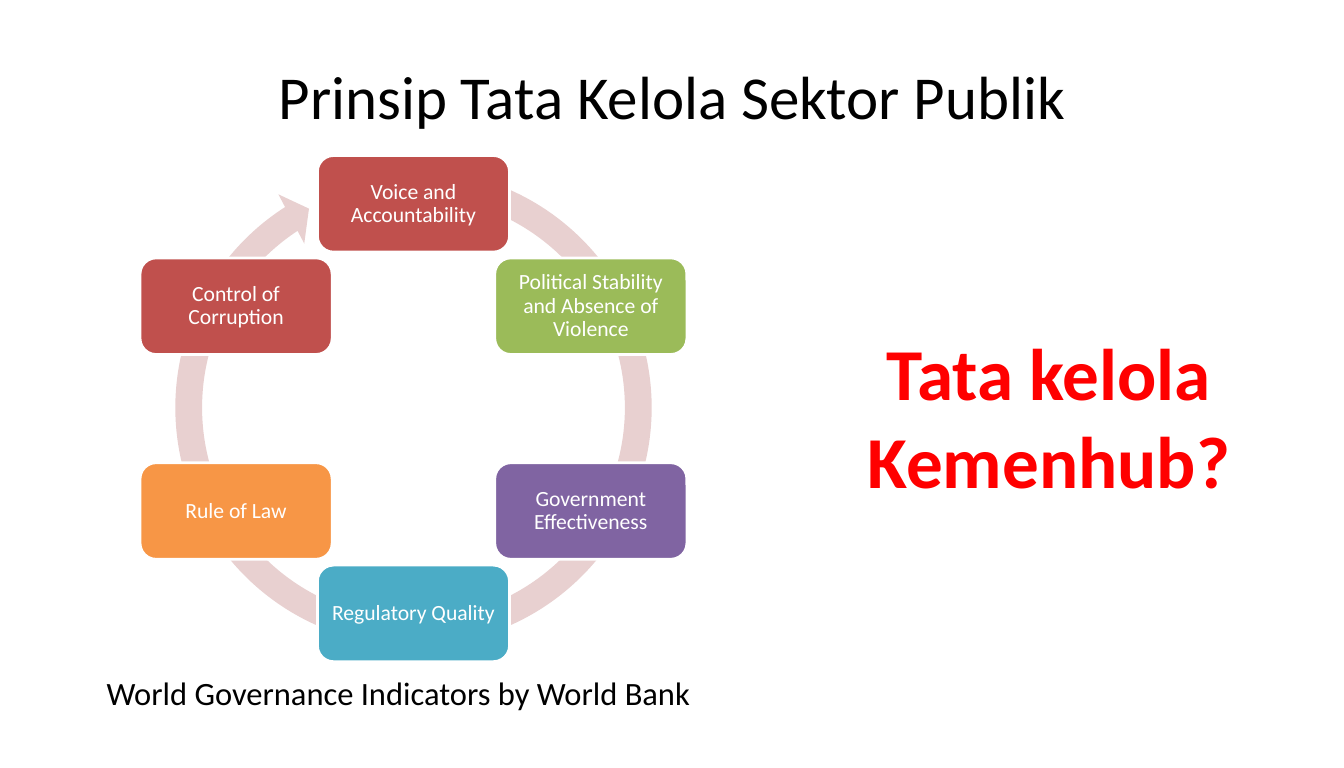
"""Build the slide on public sector governance principles."""
import math

import pptx
import pptx.dml.color
import pptx.enum.shapes
import pptx.enum.text
import pptx.util

Inches = pptx.util.Inches
Pt = pptx.util.Pt
MSO_SHAPE = pptx.enum.shapes.MSO_SHAPE
MSO_ANCHOR = pptx.enum.text.MSO_ANCHOR

COLORS = {
    "black": "000000",
    "white": "FFFFFF",
    "emphasis": "FF0000",
    "ring": "E8D0D0",
    "red": "C0504D",
    "green": "9BBB59",
    "purple": "8064A2",
    "teal": "4BACC6",
    "orange": "F79646",
}
PRINCIPLES = [
    ("Voice and Accountability", "red"),
    ("Political Stability and Absence of Violence", "green"),
    ("Government Effectiveness", "purple"),
    ("Regulatory Quality", "teal"),
    ("Rule of Law", "orange"),
    ("Control of Corruption", "red"),
]
CENTER_X, CENTER_Y = 4.24, 4.19
CYCLE_RADIUS = 2.1
CARD_WIDTH, CARD_HEIGHT = 1.97, 0.99
RING_SIZE = 5.18


def rgb(name):
    """Return the named colour."""
    return pptx.dml.color.RGBColor.from_string(COLORS[name])


def write(shape, text, size, color, anchor, insets=(0.1, 0.05), bold=False, spacing=1.0):
    """Put one centred paragraph into a shape."""
    frame = shape.text_frame
    frame.text = text
    frame.word_wrap = True
    frame.auto_size = pptx.enum.text.MSO_AUTO_SIZE.NONE
    frame.vertical_anchor = anchor
    frame.margin_left = frame.margin_right = Inches(insets[0])
    frame.margin_top = frame.margin_bottom = Inches(insets[1])
    paragraph = frame.paragraphs[0]
    paragraph.alignment = pptx.enum.text.PP_ALIGN.CENTER
    paragraph.line_spacing = spacing
    font = paragraph.runs[0].font
    font.name = "Calibri"
    font.size = Pt(size)
    font.bold = bold
    font.color.rgb = rgb(color)


def add_title(slide, text):
    """Place and format the slide title."""
    title = slide.shapes.title
    title.left, title.top = Inches(0.69), Inches(0.32)
    title.width, title.height = Inches(12.4), Inches(1.31)
    write(title, text, 45, "black", MSO_ANCHOR.MIDDLE)


def add_label(slide, text, left, top, width, height, size, color, bold=False):
    """Add a free-standing text."""
    label = slide.shapes.add_textbox(
        Inches(left), Inches(top), Inches(width), Inches(height))
    write(label, text, size, color, MSO_ANCHOR.TOP, bold=bold)


def add_centered_shape(slide, preset, x, y, width, height, fill):
    """Add a filled preset shape around a centre point."""
    shape = slide.shapes.add_shape(
        preset, Inches(x - width / 2), Inches(y - height / 2),
        Inches(width), Inches(height))
    shape.shadow.inherit = False
    shape.fill.solid()
    shape.fill.fore_color.rgb = rgb(fill)
    return shape


def add_ring(slide):
    """Add the circular arrow behind the cards."""
    ring = add_centered_shape(slide, MSO_SHAPE.CIRCULAR_ARROW, CENTER_X, CENTER_Y - 0.01,
                              RING_SIZE, RING_SIZE, "ring")
    ring.line.fill.background()
    units_per_degree = 0.6
    thickness, head_width = 5.3 / 100, 5.5 / 100
    head_angle, end_angle, start_angle = (
        degrees * units_per_degree for degrees in (5.21, 237.08, 285.48))
    for index, value in enumerate(
            (thickness, head_angle, end_angle, start_angle, head_width)):
        ring.adjustments[index] = value


def add_card(slide, text, fill, angle):
    """Add a principle card at an angle clockwise from the top."""
    x = CENTER_X + CYCLE_RADIUS * math.sin(angle)
    y = CENTER_Y - CYCLE_RADIUS * math.cos(angle)
    card = add_centered_shape(slide, MSO_SHAPE.ROUNDED_RECTANGLE, x, y,
                              CARD_WIDTH, CARD_HEIGHT, fill)
    card.line.color.rgb = rgb("white")
    card.line.width = Pt(2)
    write(card, text, 16, "white", MSO_ANCHOR.MIDDLE, insets=(0.07, 0.07), spacing=0.9)


def main():
    """Build and save the presentation."""
    presentation = pptx.Presentation()
    presentation.slide_width = Inches(441 / 32)
    presentation.slide_height = Inches(63 / 8)
    slide = presentation.slides.add_slide(presentation.slide_layouts[5])

    add_title(slide, "Prinsip Tata Kelola Sektor Publik")
    add_label(slide, "World Governance Indicators by World Bank",
              0.72, 6.85, 6.73, 0.51, 24, "black")
    add_ring(slide)
    for index, (principle, fill) in enumerate(PRINCIPLES):
        add_card(slide, principle, fill, index * math.tau / len(PRINCIPLES))
    add_label(slide, "Tata kelola Kemenhub?",
              8.47, 3.31, 4.57, 1.89, 54, "emphasis", bold=True)

    presentation.save("out.pptx")


if __name__ == "__main__":
    main()
